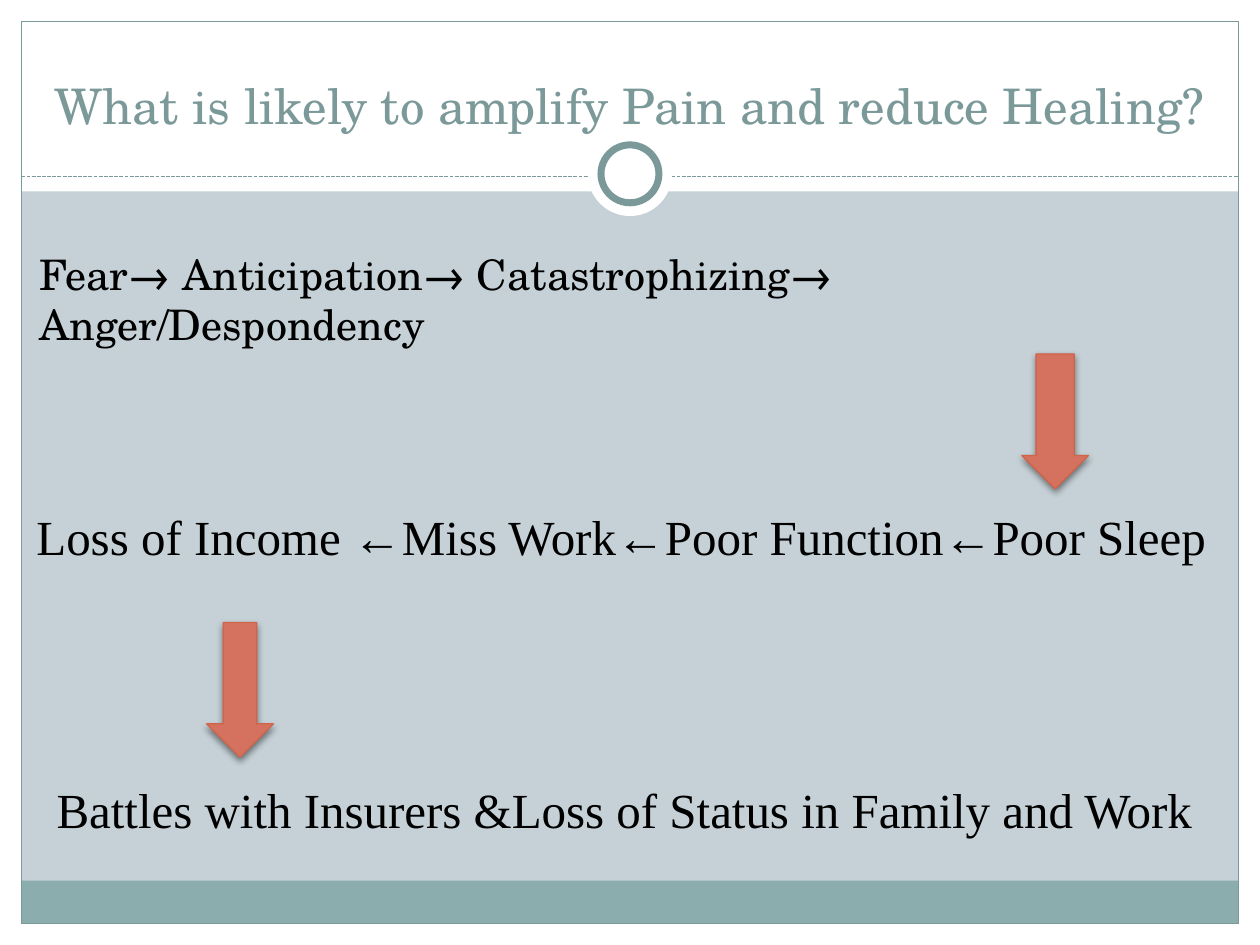
from lxml import etree
from pptx import Presentation
from pptx.dml.color import RGBColor
from pptx.enum.dml import MSO_LINE
from pptx.enum.shapes import MSO_CONNECTOR, MSO_SHAPE
from pptx.enum.text import MSO_ANCHOR, MSO_AUTO_SIZE, PP_ALIGN
from pptx.oxml.ns import qn
from pptx.util import Inches, Pt

RECT, OVAL, DOWN = MSO_SHAPE.RECTANGLE, MSO_SHAPE.OVAL, MSO_SHAPE.DOWN_ARROW
STRAIGHT, DASH = MSO_CONNECTOR.STRAIGHT, MSO_LINE.SQUARE_DOT
CENTER, LEFT = PP_ALIGN.CENTER, PP_ALIGN.LEFT
TOP, BOTTOM = MSO_ANCHOR.TOP, MSO_ANCHOR.BOTTOM
FIXED, GROW = MSO_AUTO_SIZE.NONE, MSO_AUTO_SIZE.SHAPE_TO_FIT_TEXT

WHITE = RGBColor(0xFF, 0xFF, 0xFF)
BLACK = RGBColor(0, 0, 0)
MIST = RGBColor(0xC5, 0xD1, 0xD7)
TEAL = RGBColor(0x8C, 0xAD, 0xAE)
SLATE = RGBColor(0x7C, 0x99, 0x9A)
CORAL = RGBColor(0xD4, 0x72, 0x5F)
RUST = RGBColor(0xD1, 0x63, 0x49)

WIDE, HIGH, EDGE = 10, 7.5, 0.17
SERIF, ROMAN = "TeX Gyre Schola", "Times New Roman"


def apply(item, values):
    for name, value in values.items():
        setattr(item, name, value)


def add_form(slide, kind, box, fill=None, line=None, width=0.75):
    form = slide.shapes.add_shape(kind, *map(Inches, box))
    form.shadow.inherit = False
    if fill is None:
        form.fill.background()
    else:
        form.fill.solid()
        form.fill.fore_color.rgb = fill
    if line is None:
        form.line.fill.background()
    else:
        form.line.color.rgb = line
        form.line.width = Pt(width)
    return form


def add_rule(slide, y):
    ends = map(Inches, (EDGE, y, WIDE - EDGE, y))
    rule = slide.shapes.add_connector(STRAIGHT, *ends)
    apply(rule.line, {"width": Pt(0.75), "dash_style": DASH})
    rule.line.color.rgb = SLATE
    etree.SubElement(rule._element.spPr, qn("a:effectLst"))


def add_arrow(slide, left, top, shaft=0.5):
    arrow = add_form(slide, DOWN, (left, top, 0.53, 1.07), CORAL, RUST)
    arrow.adjustments[0] = shaft
    effects = arrow._element.spPr.find(qn("a:effectLst"))
    shade = etree.SubElement(
        effects, qn("a:outerShdw"), blurRad=str(Pt(4)), dist=str(Pt(2)),
        dir="5400000", rotWithShape="0")
    tint = etree.SubElement(shade, qn("a:srgbClr"), val=str(BLACK))
    etree.SubElement(tint, qn("a:alpha"), val="45000")


def set_text(shape, text, font, color, align, frame):
    """Write one paragraph; font and frame hold format values."""
    apply(shape.text_frame, frame)
    par = shape.text_frame.paragraphs[0]
    par.alignment = align
    run = par.add_run()
    run.text = text
    apply(run.font, font)
    run.font.color.rgb = color
    return par


def fill_holder(slide, holder, box, text, size, color, align, anchor):
    """Place and fill a placeholder, and bring it in front of the frame."""
    slide.shapes._spTree.append(holder._element)
    sides = zip(("left", "top", "width", "height"), map(Inches, box))
    apply(holder, dict(sides))
    frame = {"vertical_anchor": anchor, "auto_size": FIXED, "word_wrap": True}
    font = {"name": SERIF, "size": Pt(size)}
    return set_text(holder, text, font, color, align, frame)


def drop_bullet(par):
    props = par._p.get_or_add_pPr()
    props.set("marL", "0")
    props.set("indent", "0")
    etree.SubElement(props, qn("a:buNone"))


def add_label(slide, box, text):
    label = slide.shapes.add_textbox(*map(Inches, box))
    frame = {"word_wrap": False, "auto_size": GROW}
    font = {"name": ROMAN, "size": Pt(28)}
    set_text(label, text, font, BLACK, CENTER, frame)


def add_frame(slide):
    """Draw the white margins, the footer band, the border and the ring."""
    inner = WIDE - 2 * EDGE
    for box in (
        (0, HIGH - EDGE, WIDE, EDGE),
        (0, 0, WIDE, 1.52),
        (0, 0, EDGE, HIGH),
        (WIDE - EDGE, 0, EDGE, HIGH),
    ):
        add_form(slide, RECT, box, WHITE)
    add_form(slide, RECT, (EDGE, 6.99, inner, 0.34), TEAL)
    add_form(slide, RECT, (EDGE, EDGE, inner, HIGH - 2 * EDGE), line=SLATE)
    add_rule(slide, 1.4)
    for size, line in ((0.67, None), (0.46, SLATE)):
        box = ((WIDE - size) / 2, 1.38 - size / 2, size, size)
        add_form(slide, OVAL, box, WHITE, line, 4)


def main():
    deck = Presentation()
    apply(deck, {"slide_width": Inches(WIDE), "slide_height": Inches(HIGH)})
    slide = deck.slides.add_slide(deck.slide_layouts[1])
    slide.background.fill.solid()
    slide.background.fill.fore_color.rgb = MIST
    title, body = slide.placeholders
    add_frame(slide)
    fill_holder(slide, title, (0.33, 0, 9.33, 1.12),
                "What is likely to amplify Pain and reduce Healing?",
                28, SLATE, CENTER, BOTTOM)
    par = fill_holder(slide, body, (0.21, 1.92, 9.3, 5),
                      "Fear→ Anticipation→ Catastrophizing→ Anger/Despondency",
                      24, BLACK, LEFT, TOP)
    drop_bullet(par)
    add_arrow(slide, 8.11, 2.81, 0.57)
    add_label(slide, (0.15, 3.97, 9.56, 0.57),
              "Loss of Income ←Miss Work←Poor Function←Poor Sleep")
    add_arrow(slide, 1.64, 4.94)
    add_label(slide, (0.31, 6.14, 9.29, 0.57),
              "Battles with Insurers &Loss of Status in Family and Work")
    deck.save("out.pptx")


if __name__ == "__main__":
    main()
